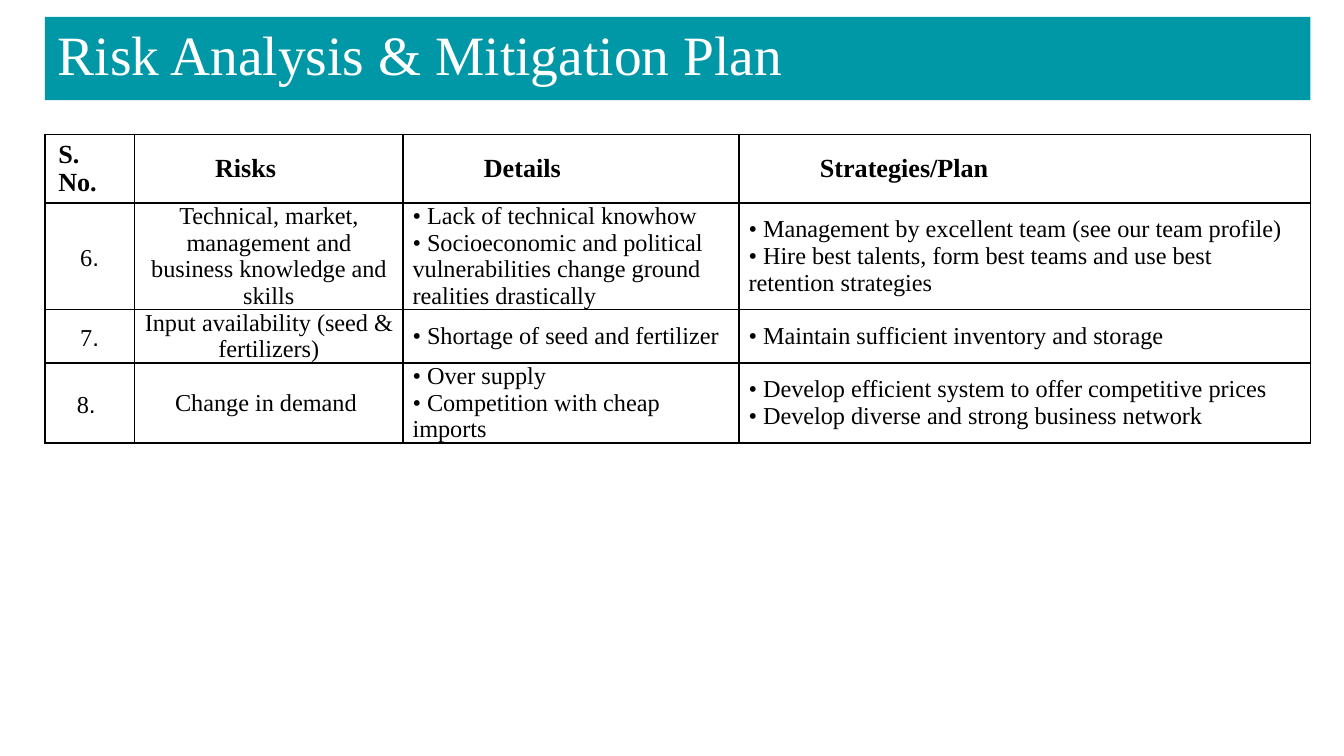
from lxml import etree
from pptx import Presentation
from pptx.dml.color import RGBColor
from pptx.enum.shapes import MSO_SHAPE
from pptx.enum.text import MSO_ANCHOR, PP_ALIGN
from pptx.oxml.ns import qn
from pptx.util import Inches, Pt

RECT = MSO_SHAPE.RECTANGLE
MID, LOW = MSO_ANCHOR.MIDDLE, MSO_ANCHOR.BOTTOM
LEFT, MIDDLE = PP_ALIGN.LEFT, PP_ALIGN.CENTER
SERIF, SANS = "Times New Roman", "Arial"
TEAL, WHITE, BLACK = "0097A7", "FFFFFF", "000000"

WIDE = 10
HIGH = WIDE * 9 / 16
EDGE, TOP = WIDE / 30, HIGH / 45
COLS = [WIDE / 15, 2, 2.5, 4.25]
SPAN = sum(COLS)
ROW = 0.31

TITLE = {"size": Pt(29.7), "name": SERIF, "bold": False}
HEAD = {"size": Pt(14), "name": SERIF, "bold": True}
BODY = {"size": Pt(13), "name": SERIF, "bold": False}
ROOMY = (0.1, 0.04, 0.1, 0.04)
TIGHT = (0.07, 0, 0.07, 0)

HEADS = ["S. No.", "Risks", "Details", "Strategies/Plan"]
RISKS = [
    ("6.", "Technical, market, management and business knowledge and skills",
     ["Lack of technical knowhow",
      "Socioeconomic and political vulnerabilities change ground realities drastically"],
     ["Management by excellent team (see our team profile)",
      "Hire best talents, form best teams and use best retention strategies"]),
    ("7.", "Input availability (seed & fertilizers)",
     ["Shortage of seed and fertilizer"],
     ["Maintain sufficient inventory and storage"]),
    ("8. ", "Change in demand ",
     ["Over supply", "Competition with cheap imports"],
     ["Develop efficient system to offer competitive prices",
      "Develop diverse and strong business network"]),
]


def paint(code):
    return RGBColor.from_string(code)


def style(item, values):
    for key, value in values.items():
        setattr(item, key, value)


def pad(item, sides):
    names = ("margin_left", "margin_top", "margin_right", "margin_bottom")
    style(item, {key: Inches(gap) for key, gap in zip(names, sides)})


def write(para, text, form, color=BLACK):
    run = para.add_run()
    run.text = text
    style(run.font, form)
    run.font.color.rgb = paint(color)


def indent(para, left, first):
    props = para._p.get_or_add_pPr()
    props.set("marL", str(Inches(left)))
    props.set("indent", str(Inches(first)))
    return props


def bullet(para):
    props = indent(para, 0, -0.09)
    tint = etree.SubElement(props, qn("a:buClr"))
    etree.SubElement(tint, qn("a:srgbClr"), val=BLACK)
    etree.SubElement(props, qn("a:buFont"), typeface=SERIF)
    etree.SubElement(props, qn("a:buChar"), char="•")


def border(cell):
    props = cell._tc.get_or_add_tcPr()
    for side in ("lnL", "lnR", "lnT", "lnB"):
        line = etree.SubElement(props, qn("a:" + side), w=str(Pt(1)))
        fill = etree.SubElement(line, qn("a:solidFill"))
        etree.SubElement(fill, qn("a:srgbClr"), val=BLACK)


def frame(cell, sides):
    border(cell)
    cell.fill.background()
    cell.vertical_anchor = MID
    pad(cell, sides)
    return cell.text_frame


def banner(slide, box, text):
    bar = slide.shapes.add_shape(RECT, *map(Inches, box))
    bar.shadow.inherit = False
    bar.fill.solid()
    bar.fill.fore_color.rgb = paint(TEAL)
    bar.line.fill.background()
    body = bar.text_frame
    style(body, {"word_wrap": True, "vertical_anchor": LOW})
    pad(body, (0.1, 0.05, 0.1, 0.1))
    para = body.paragraphs[0]
    para.alignment = LEFT
    write(para, text, TITLE, WHITE)


def grid(slide, box):
    count = len(RISKS) + 1
    table = slide.shapes.add_table(count, len(COLS), *map(Inches, box)).table
    style(table, {"first_row": False, "horz_banding": False})
    for col, width in zip(table.columns, COLS):
        col.width = Inches(width)
    for row in table.rows:
        row.height = Inches(ROW)

    # Header row
    for col, text in enumerate(HEADS):
        para = frame(table.cell(0, col), ROOMY).paragraphs[0]
        if col:
            indent(para, 0.5, 0)
        write(para, text, HEAD)

    # Risk rows: number, risk, then two bullet lists
    for row, (mark, risk, *lists) in enumerate(RISKS, 1):
        first = row == 1
        para = frame(table.cell(row, 0), ROOMY if first else TIGHT).paragraphs[0]
        style(para, {"alignment": MIDDLE, "line_spacing": 1.15})
        write(para, mark[0], BODY)
        write(para, mark[1:], {**BODY, "name": SANS})

        para = frame(table.cell(row, 1), TIGHT).paragraphs[0]
        para.alignment = MIDDLE
        write(para, risk, BODY)

        for col, points in enumerate(lists, 2):
            body = frame(table.cell(row, col), TIGHT)
            for i, point in enumerate(points):
                para = body.add_paragraph() if i else body.paragraphs[0]
                bullet(para)
                write(para, " " + point, BODY)


def main():
    deck = Presentation()
    style(deck, {"slide_width": Inches(WIDE), "slide_height": Inches(HIGH)})
    slide = deck.slides.add_slide(deck.slide_layouts[6])
    banner(slide, (EDGE, TOP, SPAN, 0.62), "Risk Analysis & Mitigation Plan")
    grid(slide, (EDGE, 1, SPAN, ROW * (len(RISKS) + 1)))
    deck.save("out.pptx")


if __name__ == "__main__":
    main()
